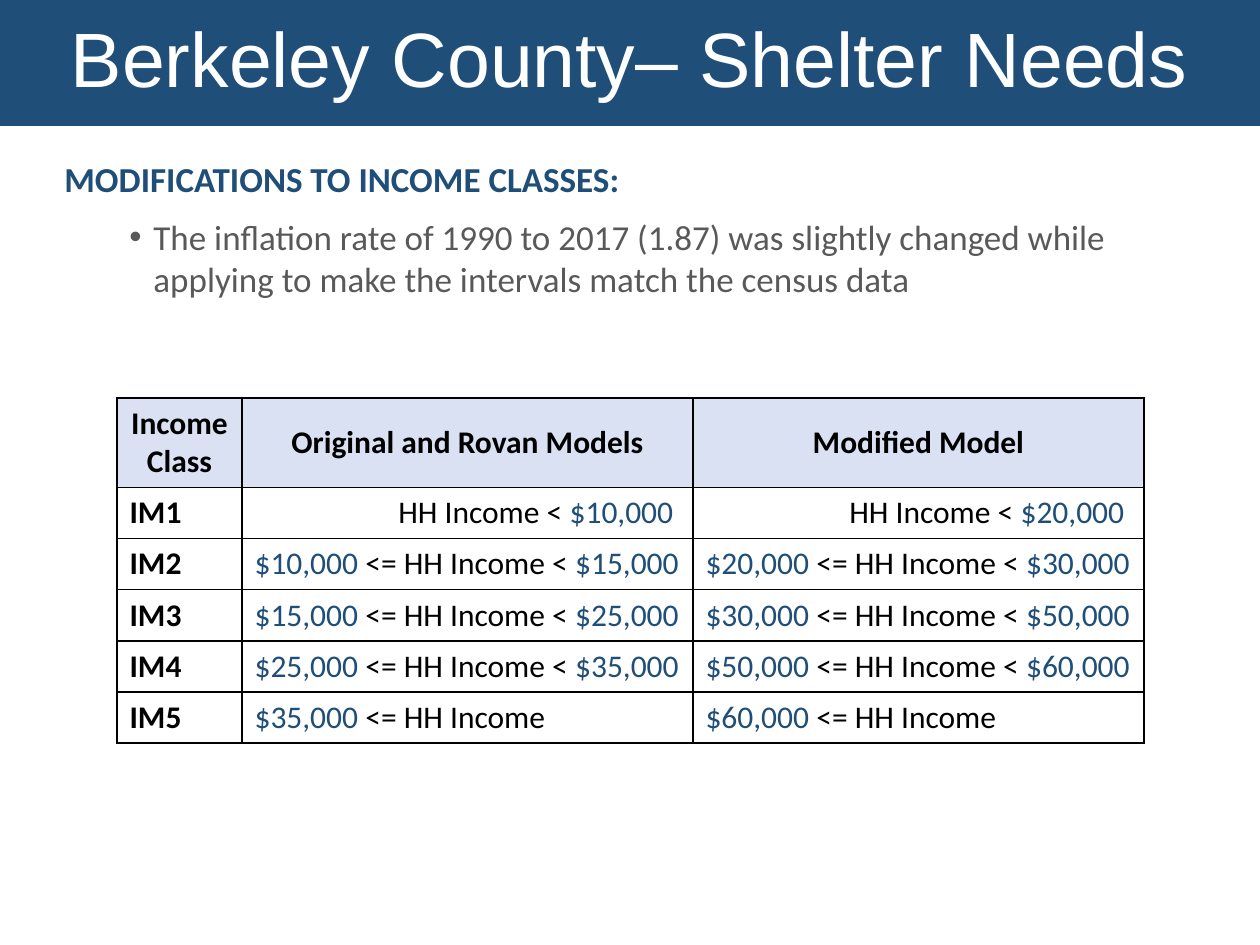
import pptx
import pptx.dml.color
import pptx.enum.shapes
import pptx.enum.text
import pptx.oxml
import pptx.oxml.ns
import pptx.util
from dataclasses import dataclass

ALIGN = pptx.enum.text.PP_ALIGN
ANCHOR = pptx.enum.text.MSO_ANCHOR
EMU_PER_PX = 914400 / 126


@dataclass(frozen=True)
class Theme:
    navy: str = "1F4E79"
    white: str = "FFFFFF"
    black: str = "000000"
    gray: str = "595959"
    header_fill: str = "D9E1F2"
    title_font: str = "Arial"
    body_font: str = "Calibri"
    title_size: int = 44
    body_size: int = 20
    table_size: int = 18
    border_width: int = 1


THEME = Theme()
MODELS = {
    "Original and Rovan Models": [10, 15, 25, 35],
    "Modified Model": [20, 30, 50, 60],
}


def px(length):
    return pptx.util.Emu(round(length * EMU_PER_PX))


def rgb(color):
    return pptx.dml.color.RGBColor.from_string(color)


def apply_format(target, values):
    for attribute, value in values.items():
        setattr(target, attribute, value)


def fill_solid(target, color):
    target.fill.solid()
    target.fill.fore_color.rgb = rgb(color)


def add_run(paragraph, text, size, color, font=THEME.body_font, bold=False):
    run = paragraph.add_run()
    run.text = text
    apply_format(run.font, {"name": font, "size": pptx.util.Pt(size), "bold": bold})
    run.font.color.rgb = rgb(color)


def add_panel(slide, box, fill, frame_format, paragraph_format):
    rectangle = pptx.enum.shapes.MSO_SHAPE.RECTANGLE
    panel = slide.shapes.add_shape(rectangle, *map(px, box))
    panel.shadow.inherit = False
    fill_solid(panel, fill)
    panel.line.fill.background()
    apply_format(panel.text_frame, {"word_wrap": True, **frame_format})
    paragraph = panel.text_frame.paragraphs[0]
    apply_format(paragraph, paragraph_format)
    return paragraph


def add_bullet(paragraph, indent):
    properties = paragraph._p.get_or_add_pPr()
    properties.set("marL", str(px(indent)))
    properties.set("indent", str(-px(indent)))
    namespace = pptx.oxml.ns.nsdecls("a")
    for markup in (
        f'<a:buFont {namespace} typeface="{THEME.title_font}"/>',
        f'<a:buChar {namespace} char="•"/>',
    ):
        properties.append(pptx.oxml.parse_xml(markup))


def border_cell(cell):
    properties = cell._tc.get_or_add_tcPr()
    width = pptx.util.Pt(THEME.border_width)
    for position, side in enumerate(("lnL", "lnR", "lnT", "lnB")):
        border = pptx.oxml.parse_xml(
            f'<a:{side} {pptx.oxml.ns.nsdecls("a")} w="{width}"><a:solidFill>'
            f'<a:srgbClr val="{THEME.black}"/></a:solidFill></a:{side}>'
        )
        properties.insert(position, border)


def write_cell(cell, parts, fill, align, bold=False):
    fill_solid(cell, fill)
    border_cell(cell)
    cell.vertical_anchor = ANCHOR.MIDDLE
    paragraph = cell.text_frame.paragraphs[0]
    paragraph.alignment = align
    for part in parts:
        color = THEME.navy if part.startswith("$") else THEME.black
        add_run(paragraph, part, THEME.table_size, color, bold=bold)


def income_interval(low, high):
    if low is None:
        return ["HH Income < ", f"${high},000 "]
    if high is None:
        return [f"${low},000 ", "<= HH Income"]
    return [f"${low},000 ", "<= HH Income < ", f"${high},000"]


def add_income_table(slide, left, top, widths, row_height, total_height):
    class_count = len(next(iter(MODELS.values()))) + 1
    frame = slide.shapes.add_table(
        class_count + 1, len(widths),
        px(left), px(top), px(sum(widths)), px(total_height),
    )
    table = frame.table
    for column, width in zip(table.columns, widths):
        column.width = px(width)
    for row in table.rows:
        row.height = px(row_height)
    frame.height = px(total_height)

    for column, heading in enumerate(["Income Class", *MODELS]):
        write_cell(table.cell(0, column), [heading], THEME.header_fill, ALIGN.CENTER, True)
    for row in range(1, class_count + 1):
        write_cell(table.cell(row, 0), [f"IM{row}"], THEME.white, ALIGN.LEFT, True)
    for column, limits in enumerate(MODELS.values(), 1):
        intervals = zip([None, *limits], [*limits, None])
        for row, (low, high) in enumerate(intervals, 1):
            align = ALIGN.RIGHT if low is None else ALIGN.LEFT
            write_cell(table.cell(row, column), income_interval(low, high), THEME.white, align)


def main():
    presentation = pptx.Presentation()
    apply_format(presentation, {"slide_width": px(1260), "slide_height": px(945)})
    slide = presentation.slides.add_slide(presentation.slide_layouts[6])

    title = add_panel(
        slide, (0, 0, 1260, 126), THEME.navy,
        {"vertical_anchor": ANCHOR.MIDDLE},
        {"alignment": ALIGN.CENTER, "line_spacing": 0.9},
    )
    add_run(title, "Berkeley County– Shelter Needs",
            THEME.title_size, THEME.white, THEME.title_font)

    add_income_table(slide, 117, 398, (125, 451, 451), 51, 344)

    body_frame = {
        "vertical_anchor": ANCHOR.TOP,
        "auto_size": pptx.enum.text.MSO_AUTO_SIZE.SHAPE_TO_FIT_TEXT,
    }
    left_aligned = {"alignment": ALIGN.LEFT}
    heading = add_panel(slide, (52, 151, 588, 55), THEME.white, body_frame, left_aligned)
    add_run(heading, "MODIFICATIONS TO INCOME CLASSES:",
            THEME.body_size, THEME.navy, bold=True)

    inflation = add_panel(slide, (117, 209, 1026, 97), THEME.white, body_frame, left_aligned)
    add_bullet(inflation, 24)
    add_run(
        inflation,
        "The inflation rate of 1990 to 2017 (1.87) was slightly changed while "
        "applying to make the intervals match the census data",
        THEME.body_size, THEME.gray,
    )
    presentation.save("out.pptx")


if __name__ == "__main__":
    main()
